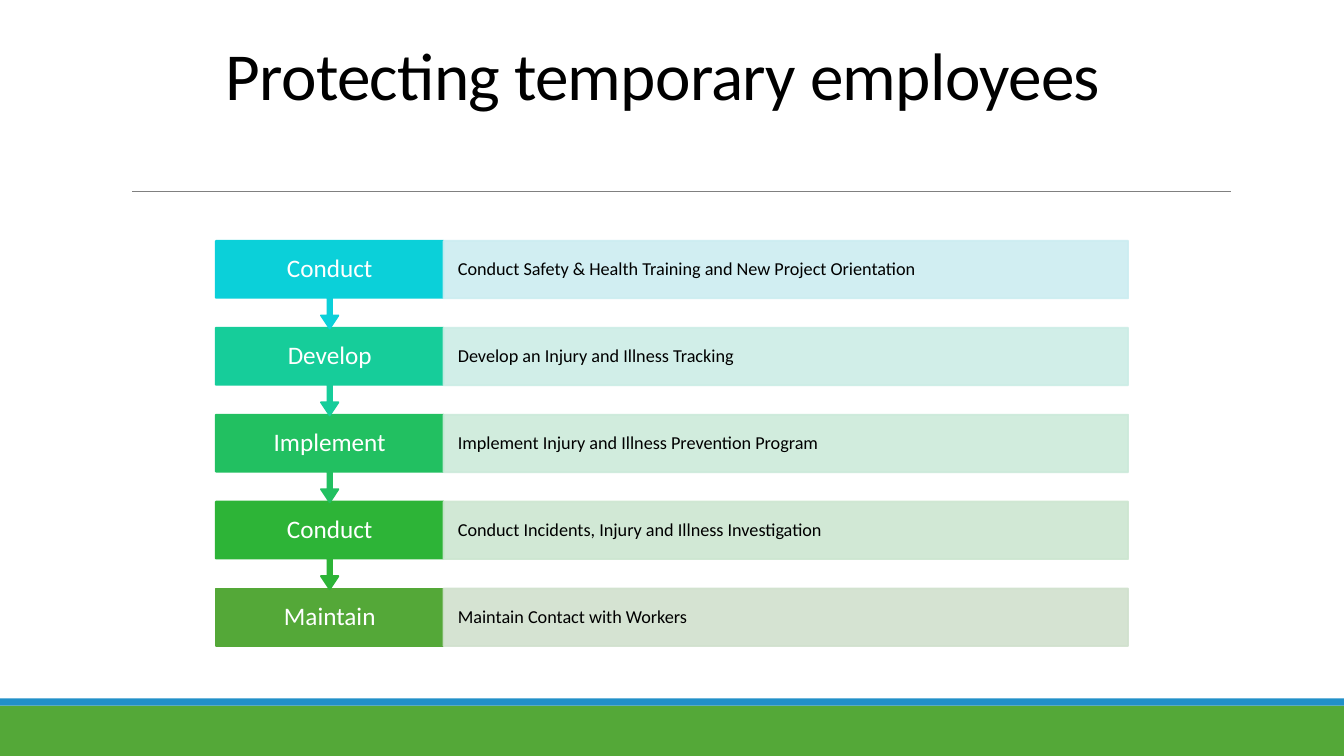
import lxml.etree
import pptx
import pptx.dml.color
import pptx.enum.shapes
import pptx.enum.text
import pptx.oxml.ns
import pptx.util

Cm, Pt = pptx.util.Cm, pptx.util.Pt
RGB = pptx.dml.color.RGBColor.from_string
SHAPE = pptx.enum.shapes.MSO_SHAPE
ALIGN = pptx.enum.text.PP_ALIGN
ANCHOR = pptx.enum.text.MSO_ANCHOR
qn = pptx.oxml.ns.qn

COLORS = {
    "green": "54A838", "blue": "2190C8", "rule": "808080",
    "black": "000000", "white": "FFFFFF",
}
# label, detail, label colour, detail colour
STEPS = [
    ("Conduct", "Conduct Safety & Health Training and New Project Orientation",
     "0BD0D9", "CCEDF1"),
    ("Develop", "Develop an Injury and Illness Tracking", "16CD9A", "CCEDE6"),
    ("Implement", "Implement Injury and Illness Prevention Program",
     "22C061", "CCEADA"),
    ("Conduct", "Conduct Incidents, Injury and Illness Investigation",
     "2DB437", "CDE6D1"),
    ("Maintain", "Maintain Contact with Workers", COLORS["green"], "D1E1CE"),
]
LEFT, TOP, PITCH = 5.44, 6.07, 2.19
LABEL_WIDTH, DETAIL_WIDTH = 5.74, 17.25
BOX_HEIGHT, CALLOUT_HEIGHT = 1.45, 2.21


def add_block(kind, left, top, width, height, color, opacity=100):
    """Add a filled shape, outlined in its own colour, measured in cm."""
    block = slide.shapes.add_shape(kind, Cm(left), Cm(top), Cm(width), Cm(height))
    block.shadow.inherit = False
    block.line.width = Pt(1.25)
    for fill in (block.fill, block.line.fill):
        fill.solid()
        fill.fore_color.rgb = RGB(color)
    if opacity < 100:
        for srgb in block._element.spPr.iter(qn("a:srgbClr")):
            lxml.etree.SubElement(srgb, qn("a:alpha"), val=str(opacity * 1000))
    return block


def write(shape, text, size, color, align, inset):
    frame = shape.text_frame
    frame.word_wrap = True
    frame.vertical_anchor = ANCHOR.MIDDLE
    frame.margin_left = frame.margin_right = Cm(inset)
    frame.margin_top = frame.margin_bottom = 0
    paragraph = frame.paragraphs[0]
    paragraph.alignment = align
    paragraph.line_spacing = 0.9
    run = paragraph.add_run()
    run.text = text
    run.font.name = "Calibri"
    run.font.size = Pt(size)
    run.font.color.rgb = RGB(color)
    return run


presentation = pptx.Presentation()
presentation.slide_width, presentation.slide_height = Cm(33.87), Cm(19.05)
slide = presentation.slides.add_slide(presentation.slide_layouts[5])

# Footer bands and the rule under the title
for top, height, color in ((17.78, 1.27, "green"), (17.6, 0.18, "blue")):
    band = add_block(SHAPE.RECTANGLE, 0, top, 33.87, height, COLORS[color])
    band.line.fill.background()

rule = slide.shapes.add_connector(
    pptx.enum.shapes.MSO_CONNECTOR.STRAIGHT, Cm(3.33), Cm(4.83), Cm(31.01), Cm(4.83))
rule.line.color.rgb = RGB(COLORS["rule"])
rule.line.width = Pt(0.5)
lxml.etree.SubElement(rule._element.spPr, qn("a:effectLst"))

# Title
title = slide.shapes.title
title.left, title.top, title.width, title.height = Cm(LEFT), Cm(0.2), Cm(22.99), Cm(2.82)
heading = write(title, "Protecting temporary employees", 48, COLORS["black"],
                ALIGN.LEFT, 0.25)
heading._r.get_or_add_rPr().set("spc", "-50")
title.text_frame.vertical_anchor = ANCHOR.BOTTOM
title.text_frame.margin_bottom = Cm(0.13)
title.text_frame.paragraphs[0].line_spacing = 0.85

# Steps, from the bottom up so that each arrow lies over the next label
for row, (label, detail, color, tint) in reversed(list(enumerate(STEPS))):
    top = TOP + row * PITCH
    if row == len(STEPS) - 1:
        step = add_block(SHAPE.RECTANGLE, LEFT, top, LABEL_WIDTH, BOX_HEIGHT, color)
    else:
        step = add_block(SHAPE.DOWN_ARROW_CALLOUT, LEFT, top, LABEL_WIDTH,
                         CALLOUT_HEIGHT, color)
        for index, value in enumerate((0.05, 0.1, 0.15, 0.65)):
            step.adjustments[index] = value
    write(step, label, 18, COLORS["white"], ALIGN.CENTER, 0.41)
    description = add_block(SHAPE.RECTANGLE, LEFT + LABEL_WIDTH, top, DETAIL_WIDTH,
                            BOX_HEIGHT, tint, opacity=90)
    write(description, detail, 13, COLORS["black"], ALIGN.LEFT, 0.36)

presentation.save("out.pptx")
